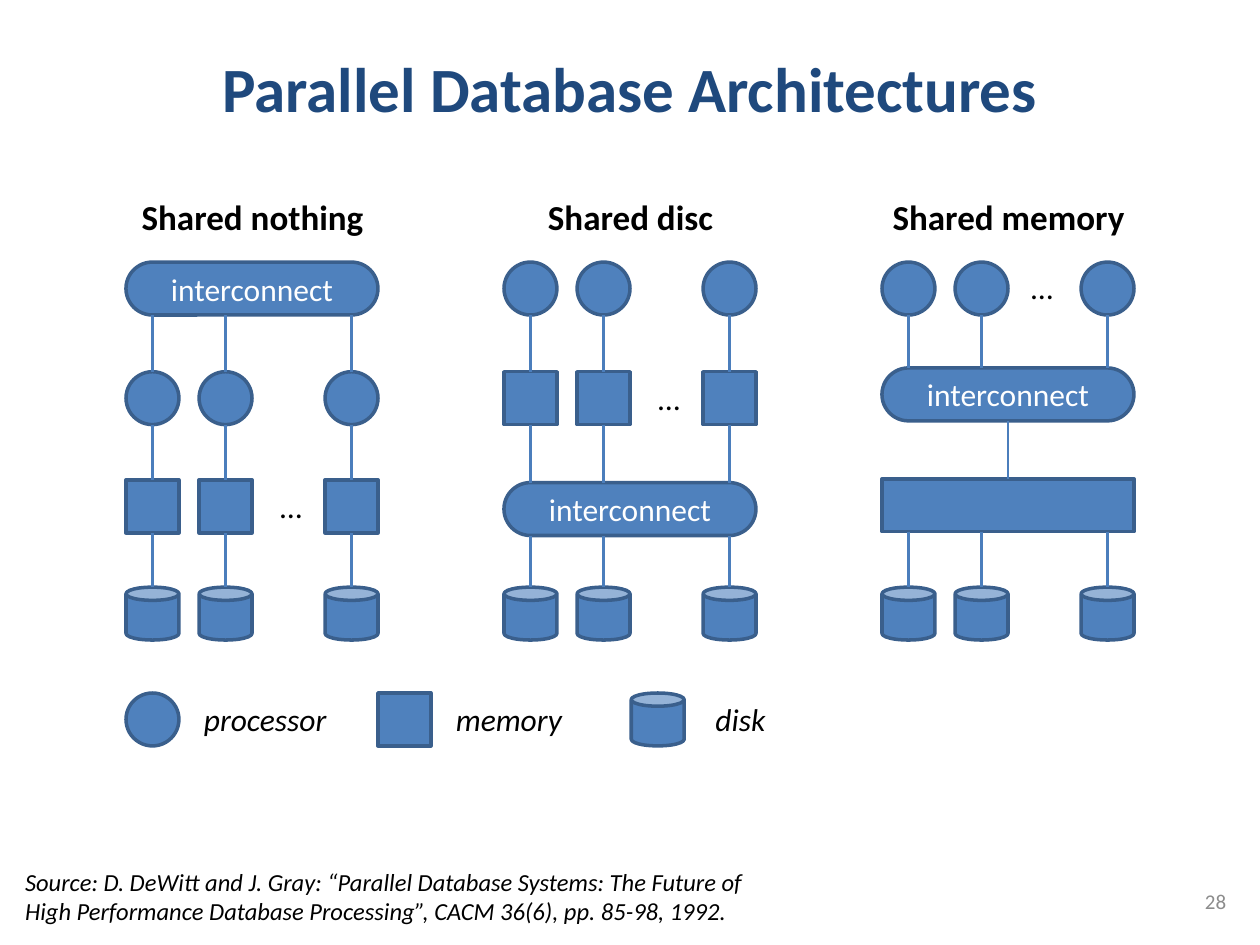
"""Build a slide comparing shared-nothing, shared-disc and shared-memory databases."""
from dataclasses import dataclass
from itertools import pairwise

import pptx
import pptx.dml.color
import pptx.enum.shapes
import pptx.enum.text
import pptx.oxml.ns
import pptx.util
from lxml import etree

EMU_PER_PX = 9144
FONT = "Calibri"
COLORS = {"title": "1F497D", "fill": "4F81BD", "outline": "3A5F8C", "link": "4B7EBC",
          "text": "000000", "label": "FFFFFF", "number": "8C8C8C"}
SIZE = 42
BAR_WIDTH = 200
LANES = (0, 58, 158)
PRESET = pptx.enum.shapes.MSO_SHAPE
ALIGN = pptx.enum.text.PP_ALIGN
KINDS = {"processor": PRESET.OVAL, "memory": PRESET.RECTANGLE, "disk": PRESET.CAN,
         "interconnect": PRESET.ROUNDED_RECTANGLE, "shared memory": PRESET.RECTANGLE}
BARS = ("interconnect", "shared memory")
GLUED = ("memory", "interconnect", "shared memory")


@dataclass(frozen=True)
class Tier:
    kind: str
    top: int


@dataclass(frozen=True)
class Architecture:
    heading: str
    left: int
    tiers: tuple[Tier, ...]
    dots_left: int
    dots_top: int


@dataclass(frozen=True)
class LegendEntry:
    kind: str
    left: int
    text_left: int
    text_width: int


ARCHITECTURES = (
    Architecture("Shared nothing", 100, (
        Tier("interconnect", 208), Tier("processor", 295),
        Tier("memory", 381), Tier("disk", 466)), 212, 382),
    Architecture("Shared disc", 400, (
        Tier("processor", 208), Tier("memory", 295),
        Tier("interconnect", 383), Tier("disk", 466)), 512, 296),
    Architecture("Shared memory", 700, (
        Tier("processor", 208), Tier("interconnect", 292),
        Tier("shared memory", 380), Tier("disk", 466)), 808, 208),
)
LEGEND = (
    LegendEntry("processor", 100, 152, 120),
    LegendEntry("memory", 300, 352, 107),
    LegendEntry("disk", 501, 558, 60),
)


def px(length: int) -> pptx.util.Emu:
    return pptx.util.Emu(length * EMU_PER_PX)


def rgb(role: str) -> pptx.dml.color.RGBColor:
    return pptx.dml.color.RGBColor.from_string(COLORS[role])


def style(frame, size: int, role: str, align=ALIGN.LEFT, bold=False, italic=False) -> None:
    for paragraph in frame.paragraphs:
        paragraph.alignment = align
        font = paragraph.font
        font.name, font.size = FONT, pptx.util.Pt(size)
        font.bold, font.italic = bold, italic
        font.color.rgb = rgb(role)


def add_text(slide, text: str, left: int, top: int, width: int, height: int, size: int,
             role: str = "text", wrap: bool = False, **look):
    frame = slide.shapes.add_textbox(px(left), px(top), px(width), px(height)).text_frame
    frame.word_wrap = wrap
    frame.text = text
    style(frame, size, role, **look)
    return frame


def add_node(slide, kind: str, left: int, top: int):
    width = BAR_WIDTH if kind in BARS else SIZE
    node = slide.shapes.add_shape(KINDS[kind], px(left), px(top), px(width), px(SIZE))
    node.shadow.inherit = False
    node.fill.solid()
    node.fill.fore_color.rgb = rgb("fill")
    node.line.color.rgb = rgb("outline")
    node.line.width = pptx.util.Pt(2)
    if kind == "interconnect":
        node.adjustments[0] = 0.5
        node.text_frame.text = kind
        node.text_frame.vertical_anchor = pptx.enum.text.MSO_ANCHOR.MIDDLE
        style(node.text_frame, 18, "label", ALIGN.CENTER)
    return node


def add_link(slide, x: int, upper: Tier, lower: Tier, upper_node, lower_node) -> None:
    link = slide.shapes.add_connector(
        pptx.enum.shapes.MSO_CONNECTOR.STRAIGHT,
        px(x), px(upper.top + SIZE), px(x), px(lower.top))
    link.line.color.rgb = rgb("link")
    link.line.width = pptx.util.Pt(1.5)
    etree.SubElement(link._element.spPr, pptx.oxml.ns.qn("a:effectLst"))
    middle = px(x)
    if upper.kind in GLUED and upper_node.left + upper_node.width // 2 == middle:
        link.begin_connect(upper_node, 2)
    if lower.kind in GLUED and lower_node.left + lower_node.width // 2 == middle:
        link.end_connect(lower_node, 0)


def add_architecture(slide, architecture: Architecture) -> None:
    left = architecture.left
    add_text(slide, architecture.heading, left - 8, 150, 217, 44, 20,
             wrap=True, align=ALIGN.CENTER, bold=True)
    rows = []
    for tier in architecture.tiers:
        if tier.kind in BARS:
            nodes = [add_node(slide, tier.kind, left, tier.top)] * len(LANES)
        else:
            nodes = [add_node(slide, tier.kind, left + lane, tier.top) for lane in LANES]
        rows.append((tier, nodes))
    for (upper, upper_nodes), (lower, lower_nodes) in pairwise(rows):
        if upper.kind in BARS and lower.kind in BARS:
            add_link(slide, left + BAR_WIDTH // 2, upper, lower,
                     upper_nodes[0], lower_nodes[0])
            continue
        for lane, upper_node, lower_node in zip(LANES, upper_nodes, lower_nodes):
            add_link(slide, left + lane + SIZE // 2, upper, lower, upper_node, lower_node)
    add_text(slide, "…", architecture.dots_left, architecture.dots_top, 38, 40, 18,
             align=ALIGN.CENTER)


def add_legend_entry(slide, entry: LegendEntry) -> None:
    add_node(slide, entry.kind, entry.left, 550)
    add_text(slide, entry.kind, entry.text_left, 551, entry.text_width, 40, 18, italic=True)


def main() -> None:
    deck = pptx.Presentation()
    deck.slide_width, deck.slide_height = px(1000), px(750)
    slide = deck.slides.add_slide(deck.slide_layouts[5])

    title = slide.shapes.title
    title.left, title.top, title.width, title.height = px(50), px(30), px(900), px(78)
    title.text_frame.text = "Parallel Database Architectures"
    style(title.text_frame, 36, "title", ALIGN.CENTER, bold=True)

    for architecture in ARCHITECTURES:
        add_architecture(slide, architecture)
    for entry in LEGEND:
        add_legend_entry(slide, entry)

    add_text(slide, "Source: D. DeWitt and J. Gray: “Parallel Database Systems: The Future of\v"
             "High Performance Database Processing”, CACM 36(6), pp. 85-98, 1992.",
             10, 683, 595, 57, 14, italic=True)
    page_number = add_text(slide, "28", 750, 695, 233, 40, 12, "number",
                           wrap=True, align=ALIGN.RIGHT)
    page_number.vertical_anchor = pptx.enum.text.MSO_ANCHOR.MIDDLE
    deck.save("out.pptx")


if __name__ == "__main__":
    main()
